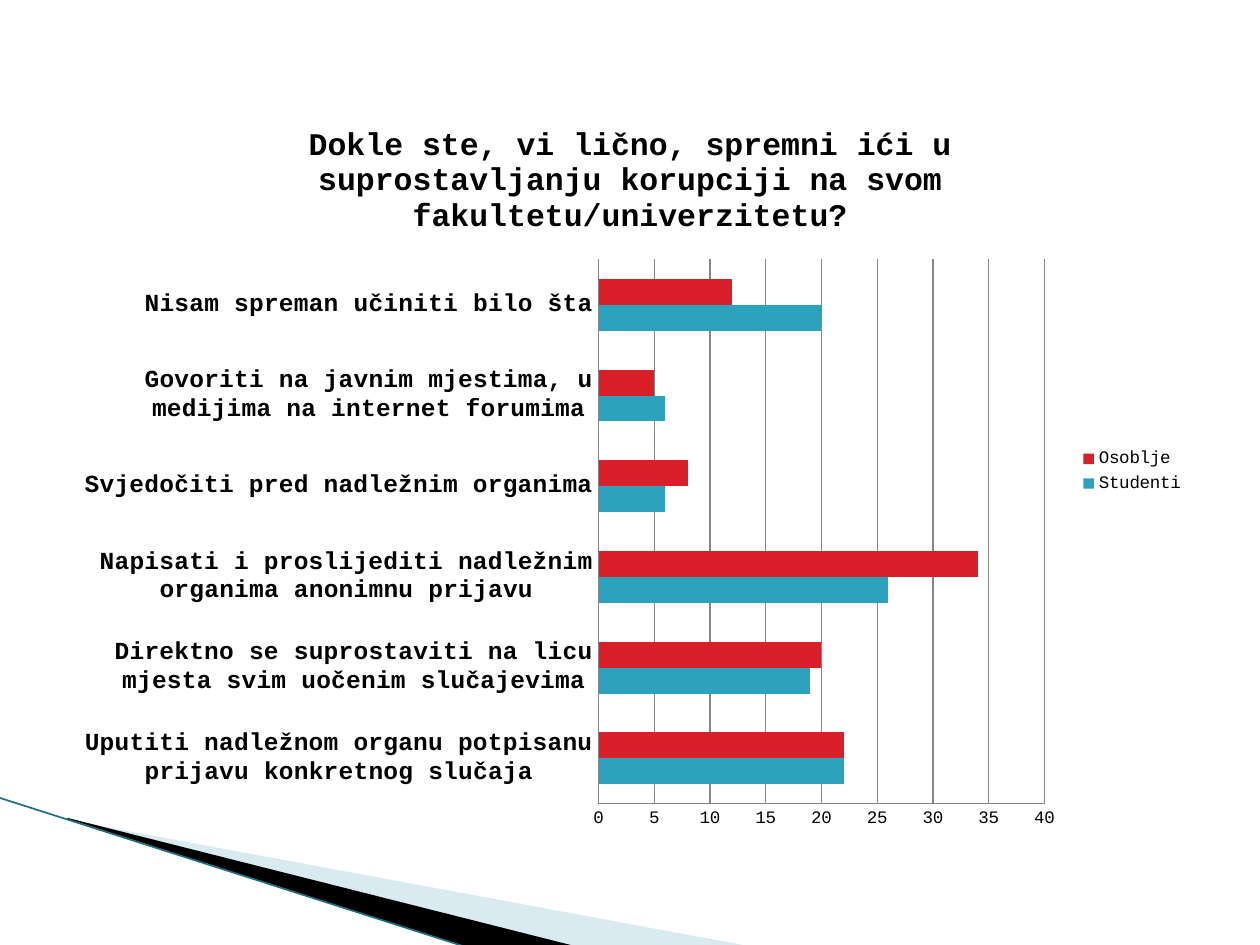
from lxml.etree import SubElement
from pptx import Presentation
from pptx.chart.data import CategoryChartData
from pptx.dml.color import RGBColor
from pptx.enum.chart import XL_CHART_TYPE, XL_LEGEND_POSITION, XL_TICK_MARK
from pptx.enum.shapes import MSO_CONNECTOR
from pptx.oxml import parse_xml
from pptx.oxml.ns import nsdecls, qn
from pptx.util import Inches, Pt

BLACK = RGBColor(0x00, 0x00, 0x00)
PALE_BLUE = RGBColor(0xA0, 0xCB, 0xDC)
DARK_TEAL = RGBColor(0x1A, 0x70, 0x84)
TEAL = RGBColor(0x2D, 0xA2, 0xBF)
RED = RGBColor(0xDA, 0x1F, 0x28)
GREY = RGBColor(0x86, 0x86, 0x86)

TITLE = ("Dokle ste, vi lično, spremni ići u suprostavljanju korupciji "
         "na svom fakultetu/univerzitetu?")
CATEGORIES = [
    "Uputiti nadležnom organu potpisanu prijavu konkretnog slučaja",
    "Direktno se suprostaviti na licu mjesta svim uočenim slučajevima",
    "Napisati i proslijediti nadležnim organima anonimnu prijavu",
    "Svjedočiti pred nadležnim organima",
    "Govoriti na javnim mjestima, u medijima na internet forumima",
    "Nisam spreman učiniti bilo šta",
]
SERIES = [
    ("Studenti", [22, 19, 26, 6, 6, 20], TEAL),
    ("Osoblje", [22, 20, 34, 8, 5, 12], RED),
]
# Left, top, width, height in inches
CHART_PLACE = (0.5, 0.78, 9, 5.92)
PLOT_PLACE = (4.75, 2.06, 3.54, 4.32)


class SlideBuilder:
    """Holds the text style and the current slide."""

    text_format = {"name": "Courier New", "size": Pt(10), "bold": False}

    def __init__(self, slide):
        self.slide = slide

    def style_font(self, font, **changes):
        for name, value in {**self.text_format, **changes}.items():
            setattr(font, name, value)
        font.color.rgb = BLACK

    def wedge(self, place, points, color, opacity=100):
        corners = [(Inches(x), Inches(y)) for x, y in points]
        builder = self.slide.shapes.build_freeform(*corners[0])
        builder.add_line_segments(corners[1:], close=True)
        shape = builder.convert_to_shape()
        self.set_frame(shape, place)
        shape.shadow.inherit = False
        shape.line.fill.background()
        shape.fill.solid()
        shape.fill.fore_color.rgb = color
        if opacity < 100:
            fill_color = shape.fill._xPr.find(".//" + qn("a:srgbClr"))
            SubElement(fill_color, qn("a:alpha"), val=str(opacity * 1000))

    def set_frame(self, shape, place):
        """Change the frame of a freeform while its corners stay in place."""
        left, top, width, height = [Inches(value) for value in place]
        shift = {"x": shape.left - left, "y": shape.top - top}
        outline = shape._element.spPr.find(".//" + qn("a:path"))
        outline.set("w", str(width))
        outline.set("h", str(height))
        for corner in outline.iter(qn("a:pt")):
            for axis, distance in shift.items():
                corner.set(axis, str(int(corner.get(axis)) + distance))
        shape.left, shape.top, shape.width, shape.height = left, top, width, height

    def line(self, start, end, color, width):
        ends = [Inches(value) for value in (*start, *end)]
        connector = self.slide.shapes.add_connector(MSO_CONNECTOR.STRAIGHT, *ends)
        connector.line.color.rgb = color
        connector.line.width = Pt(width)
        SubElement(connector._element.spPr, qn("a:effectLst"))

    def bar_chart(self, place, plot_place, title, categories, series):
        data = CategoryChartData()
        data.categories = categories
        for name, values, _ in series:
            data.add_series(name, values)
        frame = self.slide.shapes.add_chart(
            XL_CHART_TYPE.BAR_CLUSTERED, *[Inches(value) for value in place], data)
        chart = frame.chart
        self.style_font(chart.font)

        # Title
        chart.has_title = True
        chart.chart_title.include_in_layout = False
        para = chart.chart_title.text_frame.paragraphs[0]
        span = para.add_run()
        span.text = title
        for font in (para.font, span.font):
            self.style_font(font, size=Pt(18), bold=True)

        # Bars
        plot = chart.plots[0]
        plot.gap_width = 150
        plot.overlap = 0
        plot.vary_by_categories = False
        for bars, (_, _, color) in zip(plot.series, series):
            bars.format.fill.solid()
            bars.format.fill.fore_color.rgb = color

        # Axes
        for axis in (chart.category_axis, chart.value_axis):
            axis.major_tick_mark = XL_TICK_MARK.NONE
            axis.minor_tick_mark = XL_TICK_MARK.NONE
            self.style_font(axis.tick_labels.font)
            self.outline(axis.format.line)
        self.style_font(chart.category_axis.tick_labels.font, size=Pt(14), bold=True)
        value_axis = chart.value_axis
        value_axis.minimum_scale, value_axis.maximum_scale = 0, 40
        value_axis.major_unit = 5
        value_axis.has_major_gridlines = True
        self.outline(value_axis.major_gridlines.format.line)

        # Legend
        chart.has_legend = True
        chart.legend.position = XL_LEGEND_POSITION.RIGHT
        chart.legend.include_in_layout = False
        self.style_font(chart.legend.font)
        self.fix_plot_area(chart, place, plot_place)

    def outline(self, line):
        line.color.rgb = GREY
        line.width = Pt(0.75)

    def fix_plot_area(self, chart, place, plot_place):
        left, top, width, height = place
        plot_left, plot_top, plot_width, plot_height = plot_place
        shares = {"x": (plot_left - left) / width, "y": (plot_top - top) / height,
                  "w": plot_width / width, "h": plot_height / height}
        sizes = "".join(f'<c:{key} val="{value}"/>' for key, value in shares.items())
        plot_area = chart._chartSpace.chart.plotArea
        for layout in plot_area.findall(qn("c:layout")):
            plot_area.remove(layout)
        plot_area.insert(0, parse_xml(
            f'<c:layout {nsdecls("c")}><c:manualLayout><c:layoutTarget val="inner"/>'
            f'<c:xMode val="edge"/><c:yMode val="edge"/>{sizes}'
            f'</c:manualLayout></c:layout>'))


def main():
    deck = Presentation()
    deck.slide_width, deck.slide_height = Inches(10), Inches(7.5)
    page = SlideBuilder(deck.slides.add_slide(deck.slide_layouts[6]))

    # Corner decoration
    page.wedge((0.78, 5.47, 4.16, 1.58),
               [(0.55, 6.51), (5.95, 7.51), (4.56, 7.51), (0.55, 6.5)],
               PALE_BLUE, opacity=40)
    page.wedge((-0.06, 6.33, 4.16, 0.92),
               [(0.53, 6.49), (4.57, 7.51), (3.72, 7.52), (0.54, 6.5)], BLACK)
    page.line((-0.01, 6.33), (3.71, 7.52), DARK_TEAL, 0.95)

    # Survey chart
    page.bar_chart(CHART_PLACE, PLOT_PLACE, TITLE, CATEGORIES, SERIES)

    deck.save("out.pptx")


if __name__ == "__main__":
    main()
